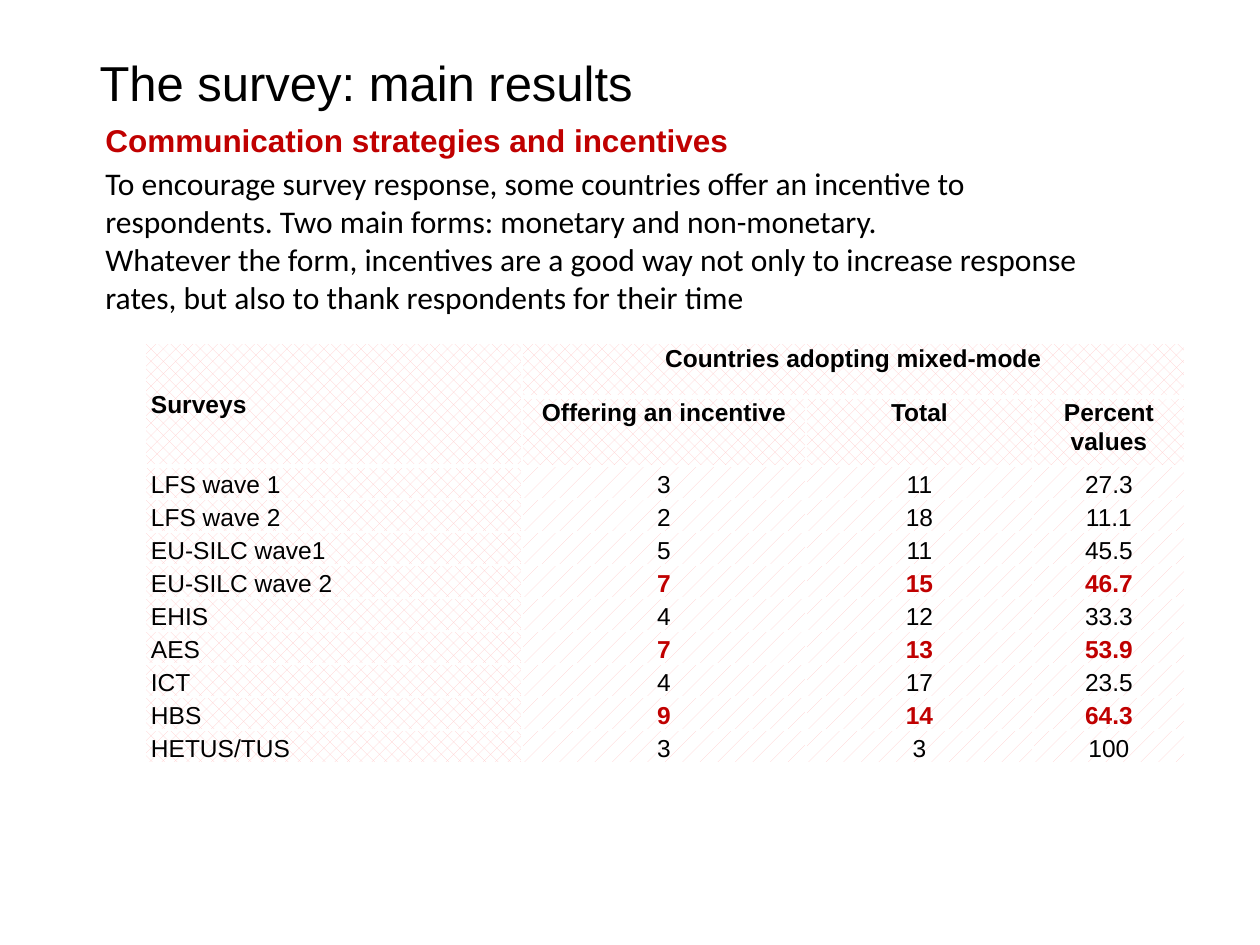
import dataclasses
import typing

import lxml.etree
import pptx
import pptx.dml.color
import pptx.enum.dml
import pptx.enum.text
import pptx.oxml.ns
import pptx.util

ALIGN = pptx.enum.text.PP_ALIGN
ANCHOR = pptx.enum.text.MSO_ANCHOR
AUTO_SIZE = pptx.enum.text.MSO_AUTO_SIZE
PATTERN = pptx.enum.dml.MSO_PATTERN
PIXELS_PER_INCH = 126
COLORS = {"text": "000000", "accent": "C00000", "pink": "FFCCCC", "white": "FFFFFF"}


@dataclasses.dataclass(frozen=True)
class Box:
    left: int
    top: int
    width: int
    height: int


@dataclasses.dataclass(frozen=True)
class SurveyRow:
    name: str
    incentive: str
    total: str
    percent: str
    highlighted: bool = False


TITLE_BOX = Box(87, 50, 1008, 120)
SUBTITLE_BOX = Box(93, 111, 1013, 73)
BODY_BOX = Box(93, 158, 1024, 165)
TABLE_LEFT, TABLE_TOP = 145, 343
COLUMN_WIDTHS = [377, 284, 227, 152]
HEADER_HEIGHTS = [54, 69]
ROW_HEIGHT = 33
HEADINGS = ["Offering an incentive", "Total", "Percent values"]
SURVEYS = [
    SurveyRow("LFS wave 1", "3", "11", "27.3"),
    SurveyRow("LFS wave 2", "2", "18", "11.1"),
    SurveyRow("EU-SILC wave1", "5", "11", "45.5"),
    SurveyRow("EU-SILC wave 2", "7", "15", "46.7", True),
    SurveyRow("EHIS", "4", "12", "33.3"),
    SurveyRow("AES", "7", "13", "53.9", True),
    SurveyRow("ICT", "4", "17", "23.5"),
    SurveyRow("HBS", "9", "14", "64.3", True),
    SurveyRow("HETUS/TUS", "3", "3", "100"),
]


def px(value: int) -> pptx.util.Emu:
    return pptx.util.Emu(round(value * 914400 / PIXELS_PER_INCH))


def rgb(name: str) -> pptx.dml.color.RGBColor:
    return pptx.dml.color.RGBColor.from_string(COLORS[name])


def write_text(text_frame: typing.Any, text: str, *, size: int, font: str = "Arial",
               color: str = "text", bold: bool = False, align: typing.Any = ALIGN.LEFT,
               line_spacing: float = 1.0) -> None:
    text_frame.text = text
    for paragraph in text_frame.paragraphs:
        paragraph.alignment = align
        paragraph.line_spacing = line_spacing
        for run in paragraph.runs:
            run.font.size = pptx.util.Pt(size)
            run.font.name = font
            run.font.bold = bold
            run.font.color.rgb = rgb(color)


def add_text_box(slide: typing.Any, box: Box, text: str, **text_format: typing.Any) -> typing.Any:
    shape = slide.shapes.add_textbox(px(box.left), px(box.top), px(box.width), px(box.height))
    shape.text_frame.word_wrap = True
    write_text(shape.text_frame, text, **text_format)
    return shape


def set_title(slide: typing.Any, box: Box, text: str) -> None:
    title = slide.shapes.title
    title.left, title.top = px(box.left), px(box.top)
    title.width, title.height = px(box.width), px(box.height)
    title.text_frame.auto_size = AUTO_SIZE.NONE
    title.text_frame.vertical_anchor = ANCHOR.TOP
    title.text_frame.margin_top = px(9)
    write_text(title.text_frame, text, size=28, line_spacing=0.9)


def set_borders(cell: typing.Any, bottom: int) -> None:
    properties = cell._tc.get_or_add_tcPr()
    widths = {"a:lnL": 1, "a:lnR": 1, "a:lnT": 1, "a:lnB": bottom}
    for index, (tag, points) in enumerate(widths.items()):
        line = lxml.etree.Element(pptx.oxml.ns.qn(tag), w=str(pptx.util.Pt(points)))
        fill = lxml.etree.SubElement(line, pptx.oxml.ns.qn("a:solidFill"))
        lxml.etree.SubElement(fill, pptx.oxml.ns.qn("a:srgbClr"), val=COLORS["white"])
        properties.insert(index, line)


def style_cell(cell: typing.Any, pattern: typing.Any, anchor: typing.Any, bottom: int = 1) -> None:
    cell.fill.patterned()
    cell.fill.pattern = pattern
    cell.fill.fore_color.rgb = rgb("pink")
    cell.fill.back_color.rgb = rgb("white")
    cell.vertical_anchor = anchor
    cell.margin_left = cell.margin_right = px(6)
    cell.margin_top = cell.margin_bottom = px(0)
    set_borders(cell, bottom)


def write_cell(cell: typing.Any, text: str, **text_format: typing.Any) -> None:
    write_text(cell.text_frame, text, size=14, line_spacing=1.07, **text_format)


def add_survey_table(slide: typing.Any) -> None:
    row_heights = HEADER_HEIGHTS + [ROW_HEIGHT] * len(SURVEYS)
    table = slide.shapes.add_table(
        len(row_heights), len(COLUMN_WIDTHS), px(TABLE_LEFT), px(TABLE_TOP),
        px(sum(COLUMN_WIDTHS)), px(sum(row_heights))).table
    table.first_row = table.horz_banding = False
    for column, width in zip(table.columns, COLUMN_WIDTHS):
        column.width = px(width)
    for row, height in zip(table.rows, row_heights):
        row.height = px(height)

    for row_index in range(len(HEADER_HEIGHTS)):
        for column_index in range(len(COLUMN_WIDTHS)):
            anchor = ANCHOR.TOP if column_index else ANCHOR.MIDDLE
            bottom = 3 if row_index == 0 or column_index == 0 else 1
            style_cell(table.cell(row_index, column_index), PATTERN.PERCENT_30, anchor, bottom)
    table.cell(0, 0).merge(table.cell(1, 0))
    table.cell(0, 1).merge(table.cell(0, 3))
    write_cell(table.cell(0, 0), "Surveys", bold=True)
    write_cell(table.cell(0, 1), "Countries adopting mixed-mode", bold=True, align=ALIGN.CENTER)
    for column_index, heading in enumerate(HEADINGS, start=1):
        write_cell(table.cell(1, column_index), heading, bold=True, align=ALIGN.CENTER)

    for row_index, survey in enumerate(SURVEYS, start=len(HEADER_HEIGHTS)):
        name_cell = table.cell(row_index, 0)
        style_cell(name_cell, PATTERN.PERCENT_30, ANCHOR.BOTTOM)
        write_cell(name_cell, survey.name)
        values = [survey.incentive, survey.total, survey.percent]
        for column_index, value in enumerate(values, start=1):
            cell = table.cell(row_index, column_index)
            style_cell(cell, PATTERN.PERCENT_5, ANCHOR.BOTTOM)
            write_cell(cell, value, bold=survey.highlighted, align=ALIGN.CENTER,
                       color="accent" if survey.highlighted else "text")


def main() -> None:
    presentation = pptx.Presentation()
    presentation.slide_width = pptx.util.Inches(10)
    presentation.slide_height = pptx.util.Inches(7.5)
    slide = presentation.slides.add_slide(presentation.slide_layouts.get_by_name("Title Only"))
    set_title(slide, TITLE_BOX, "The survey: main results")
    add_text_box(slide, SUBTITLE_BOX, "Communication strategies and incentives",
                 size=18, color="accent", bold=True, line_spacing=1.1)
    body = add_text_box(
        slide, BODY_BOX,
        "To encourage survey response, some countries offer an incentive to respondents. "
        "Two main forms: monetary and non-monetary.\n"
        "Whatever the form, incentives are a good way not only to increase response rates, "
        "but also to thank respondents for their time",
        size=18, font="Calibri")
    body.text_frame.auto_size = AUTO_SIZE.SHAPE_TO_FIT_TEXT
    add_survey_table(slide)
    presentation.save("out.pptx")


if __name__ == "__main__":
    main()
